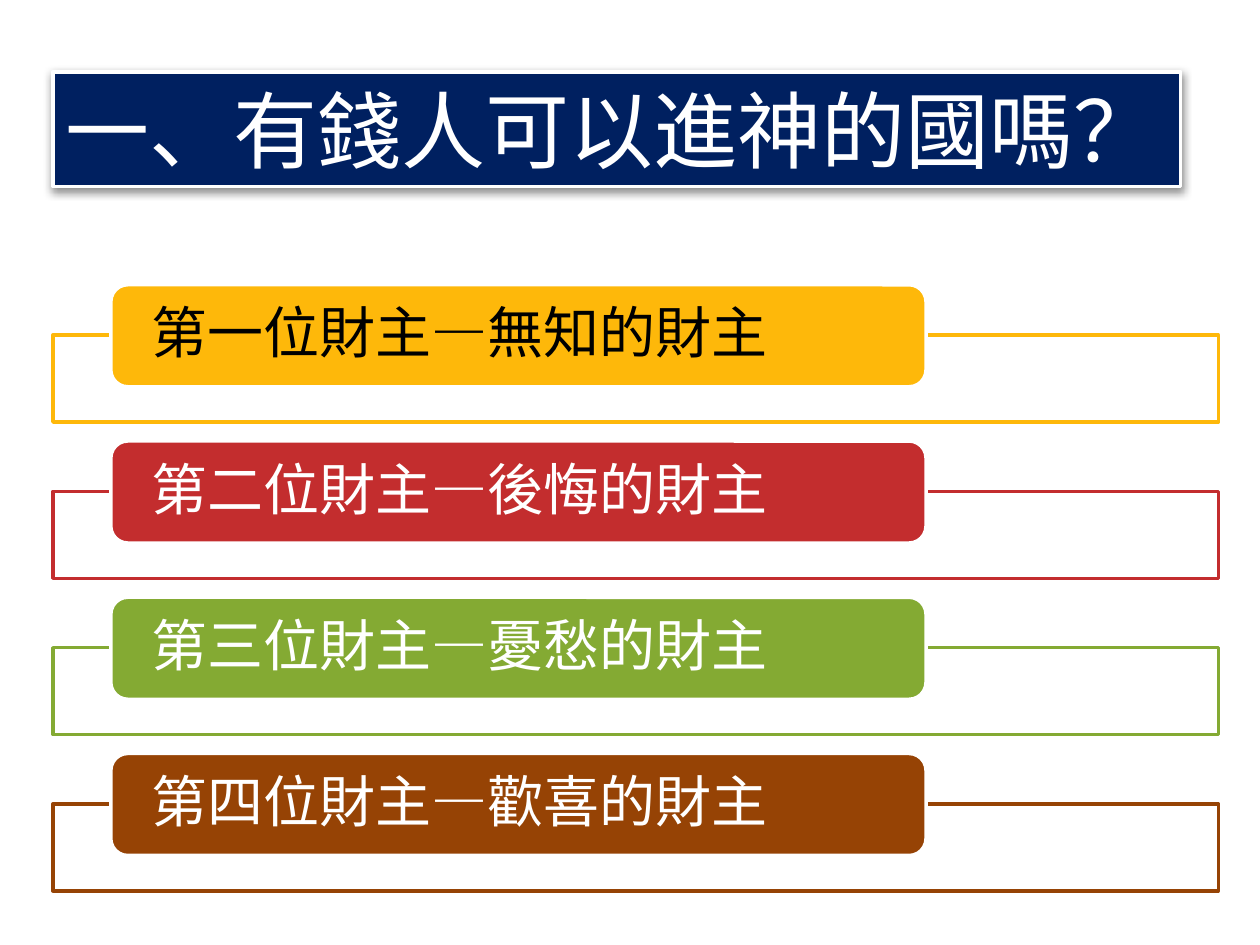
from lxml import etree
from pptx import Presentation
from pptx.dml.color import RGBColor
from pptx.enum.shapes import MSO_SHAPE as SHAPE
from pptx.enum.text import MSO_ANCHOR as ANCHOR, MSO_AUTO_SIZE as AUTO, PP_ALIGN as ALIGN
from pptx.oxml import parse_xml
from pptx.oxml.ns import nsdecls, qn
from pptx.util import Inches, Pt

COLORS = {
    "navy": "002060", "white": "FFFFFF", "black": "000000",
    "amber": "FEB80A", "red": "C32D2E", "green": "84AA33", "brown": "964305",
}
ITEMS = [
    ("第一位財主—無知的財主", "amber", "black"),
    ("第二位財主—後悔的財主", "red", "white"),
    ("第三位財主—憂愁的財主", "green", "white"),
    ("第四位財主—歡喜的財主", "brown", "white"),
]
LEFT, FIRST_TOP, STEP = 0.42, 2.26, 1.24


def rgb(name):
    return RGBColor.from_string(COLORS[name])


def place(sp, x, y, w, h):
    sp.left, sp.top, sp.width, sp.height = map(Inches, (x, y, w, h))


def paint(sp, fill, line):
    sp.fill.solid()
    sp.fill.fore_color.rgb = rgb(fill)
    sp.line.color.rgb = rgb(line)
    sp.line.width = Pt(2)


def write(sp, text, size, font, color):
    tf = sp.text_frame
    tf.text = text
    tf.vertical_anchor = ANCHOR.MIDDLE
    p = tf.paragraphs[0]
    p.alignment = ALIGN.LEFT
    f = p.runs[0].font
    f.size, f.name = Pt(size), font
    f.color.rgb = rgb(color)
    return tf


def add_shadow(sp):
    sp._element.spPr.append(parse_xml(
        f'<a:effectLst {nsdecls("a")}>'
        f'<a:outerShdw blurRad="{Pt(5)}" dist="{Pt(2)}" dir="5400000" algn="t" rotWithShape="0">'
        f'<a:srgbClr val="{COLORS["black"]}"><a:alpha val="43000"/></a:srgbClr>'
        '</a:outerShdw></a:effectLst>'))


def add_title(s, text):
    sp = s.shapes.title
    place(sp, LEFT, 0.57, 8.95, 0.91)
    paint(sp, "navy", "white")
    add_shadow(sp)
    tf = write(sp, text, 48, "Cabin", "white")
    tf.word_wrap = False
    tf.auto_size = AUTO.SHAPE_TO_FIT_TEXT


def add_box(s, kind, x, y, w, h, fill, line):
    sp = s.shapes.add_shape(kind, *map(Inches, (x, y, w, h)))
    sp.shadow.inherit = False
    paint(sp, fill, line)
    return sp


def add_item(s, top, text, color, text_color):
    frame = add_box(s, SHAPE.RECTANGLE, LEFT, top + 0.4, 9.25, 0.69, "white", color)
    clr = frame._element.spPr.find(qn("a:solidFill"))[0]
    etree.SubElement(clr, qn("a:alpha")).set("val", "90000")
    label = add_box(s, SHAPE.ROUNDED_RECTANGLE, 0.88, top, 6.47, 0.81, color, "white")
    tf = write(label, text, 32, "Lato", text_color)
    tf.word_wrap = True
    tf.margin_left = tf.margin_right = Inches(0.28)
    tf.margin_top = tf.margin_bottom = 0
    tf.paragraphs[0].line_spacing = 0.9


def main():
    prs = Presentation()
    prs.slide_width, prs.slide_height = Inches(10), Inches(7.5)
    s = prs.slides.add_slide(prs.slide_layouts[5])
    add_title(s, "一、有錢人可以進神的國嗎？")
    for i, item in enumerate(ITEMS):
        add_item(s, FIRST_TOP + i * STEP, *item)
    prs.save("out.pptx")


if __name__ == "__main__":
    main()
